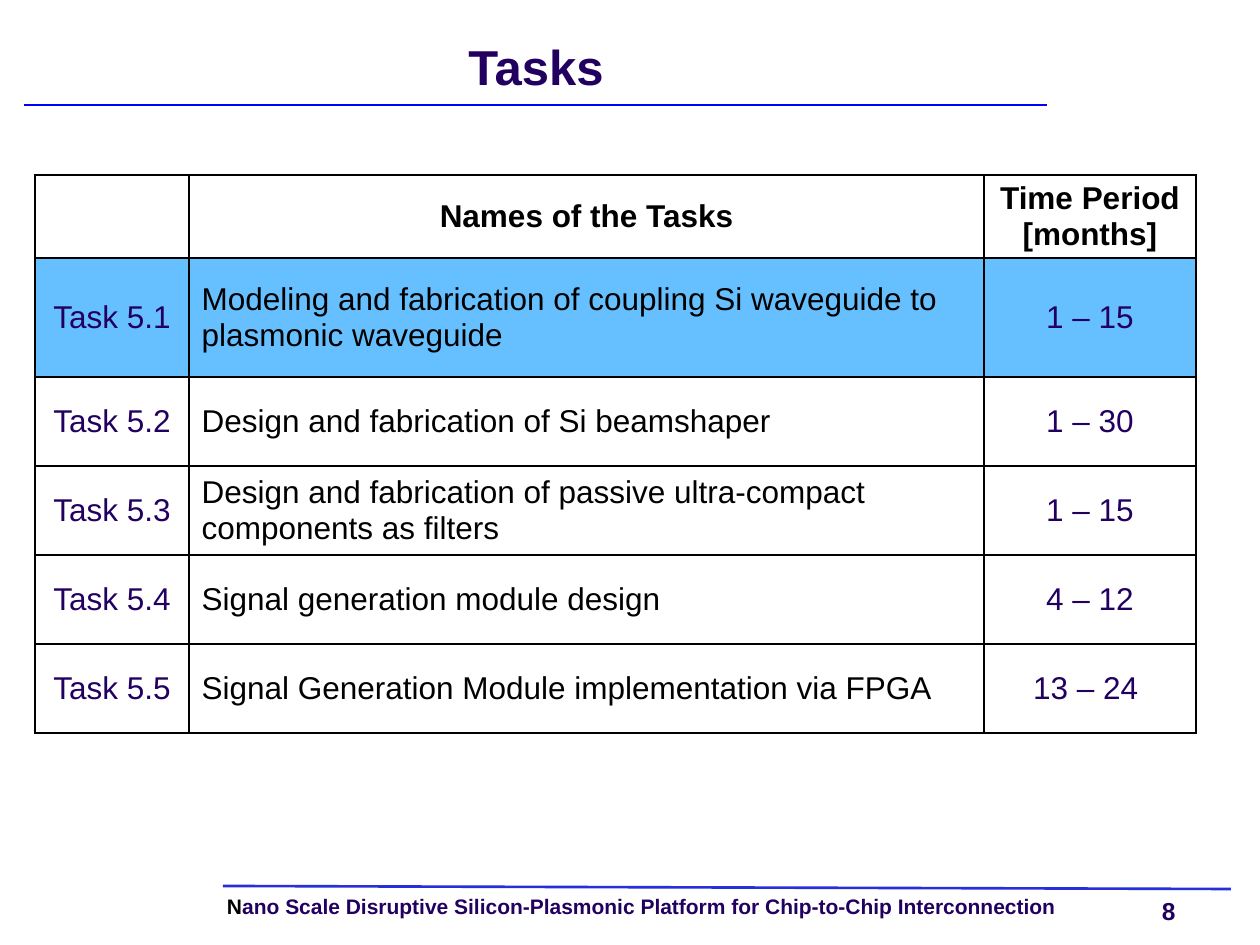
from lxml.etree import SubElement
from pptx import Presentation
from pptx.dml.color import RGBColor
from pptx.enum.shapes import MSO_CONNECTOR as Connector
from pptx.enum.text import MSO_ANCHOR as Anchor, MSO_AUTO_SIZE as AutoSize, PP_ALIGN as Align
from pptx.oxml.ns import qn
from pptx.util import Emu, Pt

COLORS = {"ink": "000000", "navy": "220060", "title_rule": "0000FF",
          "footer_rule": "262FDA", "highlight": "66C0FF"}
FONT = "Arial"
TASKS = [
    ("Task 5.1", "Modeling and fabrication of coupling Si waveguide to plasmonic waveguide", "1 – 15"),
    ("Task 5.2", "Design and fabrication of Si beamshaper", "1 – 30"),
    ("Task 5.3", "Design and fabrication of passive ultra-compact components as filters", "1 – 15"),
    ("Task 5.4", "Signal generation module design", "4 – 12"),
    ("Task 5.5", "Signal Generation Module implementation via FPGA", "13 – 24 "),
]
HEADER = ("", "Names of the Tasks", "Time Period [months]")


def px(length):
    return Emu(round(length * 914400 / 126))


def color(name):
    return RGBColor.from_string(COLORS[name])


class TaskSlide:
    """Draws the parts of one slide in a shared style."""

    def __init__(self, deck):
        self.slide = deck.slides.add_slide(deck.slide_layouts[5])

    def style(self, font, size, tint, bold):
        for name, value in {"name": FONT, "size": Pt(size), "bold": bold}.items():
            setattr(font, name, value)
        font.color.rgb = color(tint)

    def frame(self, text_frame, anchor):
        margins = dict.fromkeys(("margin_left", "margin_top", "margin_right", "margin_bottom"), 0)
        settings = {"word_wrap": True, "auto_size": AutoSize.NONE, "vertical_anchor": anchor}
        for name, value in {**margins, **settings}.items():
            setattr(text_frame, name, value)

    def title(self, text, box):
        heading = self.slide.shapes.title
        for name, value in zip(("left", "top", "width", "height"), box):
            setattr(heading, name, px(value))
        self.frame(heading.text_frame, Anchor.MIDDLE)
        line = heading.text_frame.paragraphs[0]
        line.text, line.alignment, line.line_spacing = text, Align.CENTER, Pt(32)
        self.style(line.runs[0].font, 28, "navy", True)

    def label(self, parts, box, size, spacing=1.0):
        text_frame = self.slide.shapes.add_textbox(*map(px, box)).text_frame
        self.frame(text_frame, Anchor.TOP)
        line = text_frame.paragraphs[0]
        line.line_spacing = spacing
        for text, tint in parts:
            run = line.add_run()
            run.text = text
            self.style(run.font, size, tint, True)

    def rule(self, ends, tint):
        rule = self.slide.shapes.add_connector(Connector.STRAIGHT, *map(px, ends))
        rule.line.color.rgb = color(tint)
        rule.line.width = Pt(1.5)
        SubElement(rule._element.spPr, qn("a:effectLst"))

    def borders(self, cell):
        properties = cell._tc.get_or_add_tcPr()
        for side in ("lnL", "lnR", "lnT", "lnB"):
            edge = SubElement(properties, qn(f"a:{side}"), w=str(Pt(1)))
            fill = SubElement(edge, qn("a:solidFill"))
            SubElement(fill, qn("a:srgbClr"), val=COLORS["ink"])

    def cell(self, cell, text, tint, bold, align, fill):
        self.borders(cell)
        cell.vertical_anchor = Anchor.MIDDLE
        if fill:
            cell.fill.solid()
            cell.fill.fore_color.rgb = color(fill)
        else:
            cell.fill.background()
        line = cell.text_frame.paragraphs[0]
        line.alignment = align
        self.style(line.font, 18, tint, bold)
        if text:
            run = line.add_run()
            run.text = text
            self.style(run.font, 18, tint, bold)

    def table(self, rows, left, top, widths, heights):
        size = map(px, (left, top, sum(widths), sum(heights)))
        table = self.slide.shapes.add_table(len(rows), len(widths), *size).table
        table.first_row = table.horz_banding = False
        for column, width in zip(table.columns, widths):
            column.width = px(width)
        for r, (texts, height) in enumerate(zip(rows, heights)):
            table.rows[r].height = px(height)
            for c, text in enumerate(texts):
                header, name = r == 0, c == 1
                self.cell(table.cell(r, c), text,
                          "ink" if header or name else "navy", header,
                          Align.LEFT if name and not header else Align.CENTER,
                          "highlight" if r == 1 else None)


def main():
    deck = Presentation()
    deck.slide_width, deck.slide_height = px(1260), px(945)
    page = TaskSlide(deck)
    page.label([("N", "ink"), ("ano Scale Disruptive Silicon-Plasmonic Platform for "
                               "Chip-to-Chip Interconnection", "navy")],
               (227, 896, 900, 23), 12, 0.9)
    page.label([("8", "navy")], (1162, 896, 50, 29), 14)
    page.rule((223, 886, 1231, 889), "footer_rule")
    page.rule((24, 105, 1047, 105), "title_rule")
    page.title("Tasks", (25, 25, 1022, 85))
    page.table([HEADER, *TASKS], 35, 175, (154, 795, 212), (83, 119, *[89] * 4))
    deck.save("out.pptx")


if __name__ == "__main__":
    main()
